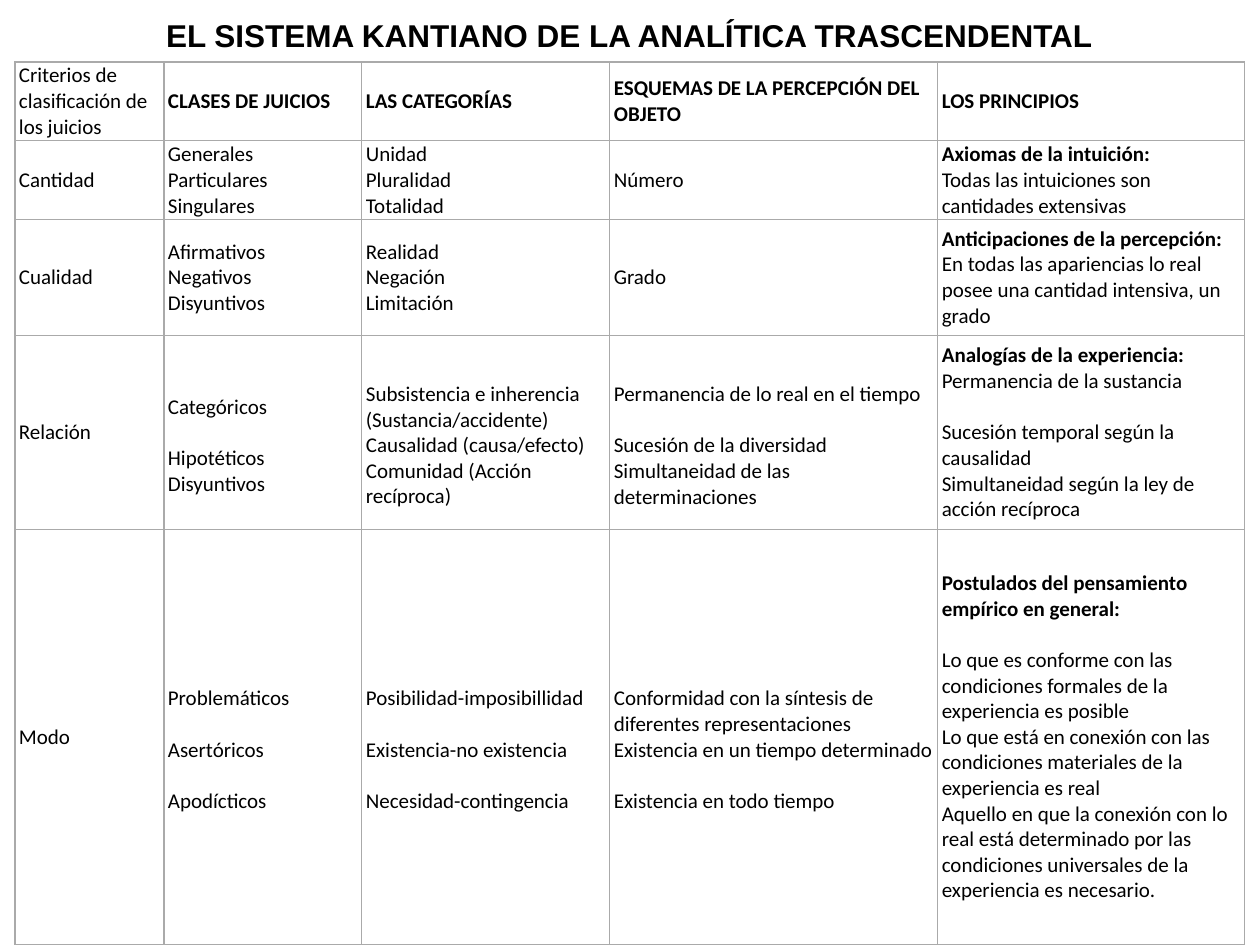
"""Build a slide with the table of Kant's transcendental analytic."""
from dataclasses import dataclass

from lxml.etree import SubElement
from pptx import Presentation
from pptx.dml.color import RGBColor
from pptx.enum.text import MSO_ANCHOR as ANCHOR, MSO_AUTO_SIZE as AUTO, PP_ALIGN as ALIGN
from pptx.oxml.ns import qn
from pptx.util import Emu, Pt

PX = 914400 // 126


@dataclass(frozen=True)
class Theme:
    ink: str = "000000"
    border: str = "AAAAAA"
    border_pt: float = 0.75
    title_font: str = "Arial"
    title_pt: int = 18
    body_font: str = "Calibri"
    body_pt: int = 12
    gap_pt: float = 14.65
    gap_px: int = 26


theme = Theme()


def set_font(p, name, size, bold):
    p.font.name, p.font.size, p.font.bold = name, Pt(size), bold
    p.font.color.rgb = RGBColor.from_string(theme.ink)


def set_borders(cell):
    tcPr = cell._tc.get_or_add_tcPr()
    for i, side in enumerate(("lnL", "lnR", "lnT", "lnB")):
        ln = SubElement(tcPr, qn(f"a:{side}"), w=str(Pt(theme.border_pt)))
        SubElement(SubElement(ln, qn("a:solidFill")), qn("a:srgbClr"), val=theme.border)
        tcPr.insert(i, ln)


COLS = [149, 198, 248, 328, 307]
ROWS = [68, 73, 116, 194, 415]
CELLS = [
    ["Criterios de clasificación de los juicios", "CLASES DE JUICIOS", "LAS CATEGORÍAS",
     "ESQUEMAS DE LA PERCEPCIÓN DEL OBJETO", "LOS PRINCIPIOS"],
    ["Cantidad", "Generales\nParticulares\nSingulares", "Unidad\nPluralidad\nTotalidad", "Número",
     "Axiomas de la intuición:\nTodas las intuiciones son cantidades extensivas"],
    ["Cualidad", "Afirmativos\nNegativos\nDisyuntivos", "Realidad\nNegación\nLimitación", "Grado",
     "Anticipaciones de la percepción:\n"
     "En todas las apariencias lo real posee una cantidad intensiva, un grado"],
    ["Relación", "\nCategóricos\n\nHipotéticos\nDisyuntivos",
     "\nSubsistencia e inherencia (Sustancia/accidente)\nCausalidad (causa/efecto)\n"
     "Comunidad (Acción recíproca)",
     "\nPermanencia de lo real en el tiempo\n\nSucesión de la diversidad\n"
     "Simultaneidad de las determinaciones",
     "Analogías de la experiencia:\nPermanencia de la sustancia\n\n"
     "Sucesión temporal según la causalidad\nSimultaneidad según la ley de acción recíproca"],
    ["Modo", "\nProblemáticos\n\nAsertóricos\n\nApodícticos",
     "\nPosibilidad-imposibillidad\n\nExistencia-no existencia\n\nNecesidad-contingencia",
     "\nConformidad con la síntesis de diferentes representaciones\n"
     "Existencia en un tiempo determinado\n\nExistencia en todo tiempo",
     "Postulados del pensamiento empírico en general:\n\n"
     "Lo que es conforme con las condiciones formales de la experiencia es posible\n"
     "Lo que está en conexión con las condiciones materiales de la experiencia es real\n"
     "Aquello en que la conexión con lo real está determinado por las condiciones "
     "universales de la experiencia es necesario."],
]

prs = Presentation()
prs.slide_width, prs.slide_height = Emu(1260 * PX), Emu(945 * PX)
s = prs.slides.add_slide(prs.slide_layouts[6])

frame = s.shapes.add_table(len(ROWS), len(COLS), 15 * PX, 62 * PX, sum(COLS) * PX, sum(ROWS) * PX)
table = frame.table
table.first_row = table.horz_banding = False
for column, width in zip(table.columns, COLS):
    column.width = Emu(width * PX)
for row, height in zip(table.rows, ROWS):
    row.height = Emu(height * PX)

for i, texts in enumerate(CELLS):
    for j, text in enumerate(texts):
        cell = table.cell(i, j)
        cell.fill.background()
        set_borders(cell)
        cell.vertical_anchor = ANCHOR.MIDDLE
        cell.margin_left = cell.margin_right = Emu(4 * PX)
        cell.margin_bottom = Emu(PX)
        cell.margin_top = Emu((1 + theme.gap_px * text.startswith("\n")) * PX)
        tf = cell.text_frame
        gap = False
        for k, line in enumerate(text.lstrip("\n").split("\n")):
            if not line:
                gap = True
                continue
            p = tf.add_paragraph() if k else tf.paragraphs[0]
            p.text = line
            p.space_before = Pt(theme.gap_pt if gap else 0)
            set_font(p, theme.body_font, theme.body_pt, (i == 0 and j > 0) or line.endswith(":"))
            gap = False

title = s.shapes.add_textbox(149 * PX, 10 * PX, 961 * PX, 50 * PX)
tf = title.text_frame
tf.word_wrap = False
tf.auto_size = AUTO.SHAPE_TO_FIT_TEXT
tf.vertical_anchor = ANCHOR.MIDDLE
p = tf.paragraphs[0]
p.text = "EL SISTEMA KANTIANO DE LA ANALÍTICA TRASCENDENTAL"
p.alignment = ALIGN.CENTER
set_font(p, theme.title_font, theme.title_pt, True)

prs.save("out.pptx")
